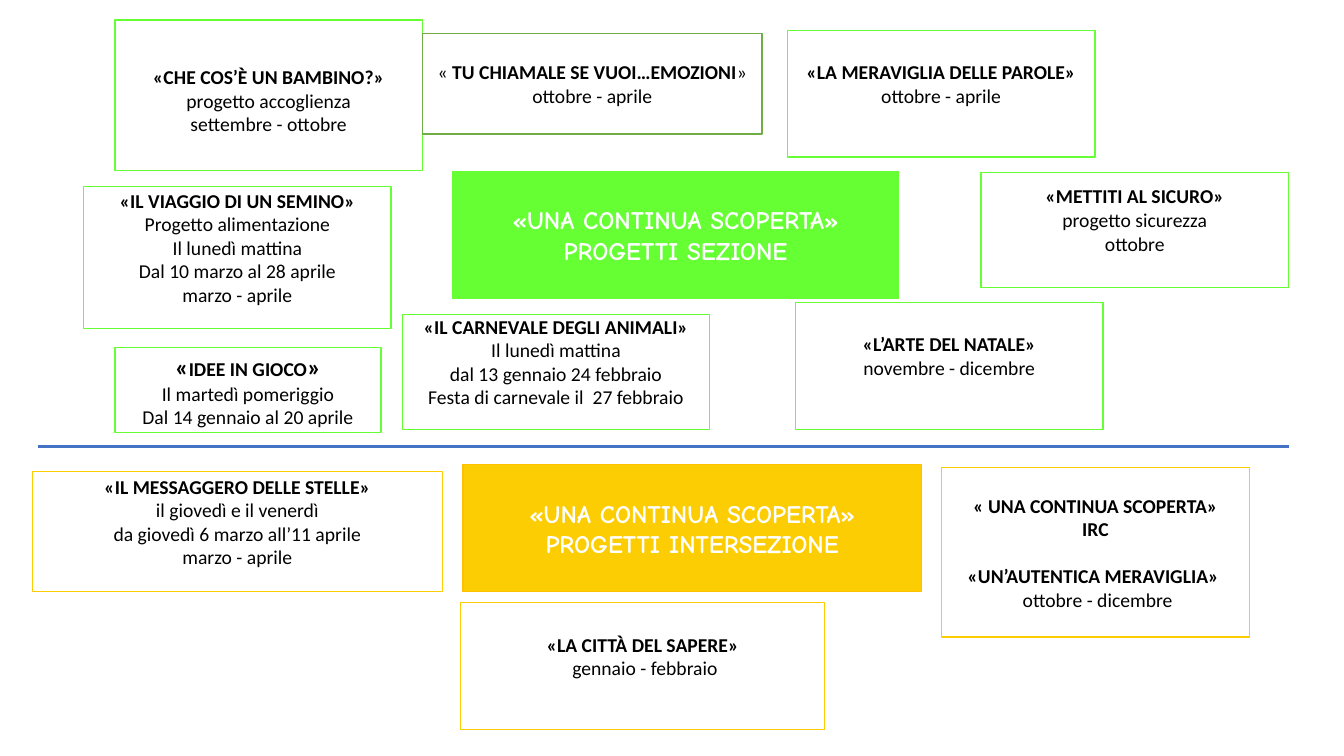
from pptx import Presentation
from pptx.dml.color import RGBColor
from pptx.enum.shapes import MSO_CONNECTOR as Link, MSO_SHAPE as Form
from pptx.enum.text import MSO_ANCHOR as Anchor, PP_ALIGN as Align
from pptx.oxml.ns import qn
from pptx.util import Inches, Pt
from lxml.etree import SubElement

GREEN, GOLD, WHITE = "66FF33", "FDCD03", "FFFFFF"
WIDE = 3.05  # usual width of a project card
LOW = 0.25   # bottom inset that lifts the text of a card


def color(code):
    return RGBColor.from_string(code)


def write(shape, lines, size=14, font="Calibri", ink="000000", heads=1,
          gap=None, top=0.05, low=0.05):
    """Fill a shape; the first `heads` lines are bold, and line `gap` has space above.

    A line is a string or a list of (text, size, bold) runs.
    """
    frame = shape.text_frame
    frame.word_wrap = True
    frame.vertical_anchor = Anchor.MIDDLE
    frame.margin_left = frame.margin_right = Inches(0.1)
    frame.margin_top, frame.margin_bottom = Inches(top), Inches(low)
    for i, line in enumerate(lines):
        para = frame.paragraphs[0] if i == 0 else frame.add_paragraph()
        para.alignment = Align.CENTER
        if i == gap:
            para.space_before = Pt(17)
        runs = [(line, size, i < heads)] if isinstance(line, str) else line
        for words, points, bold in runs:
            run = para.add_run()
            run.text = words
            run.font.name, run.font.size, run.font.bold = font, Pt(points), bold
            run.font.color.rgb = color(ink)


def card(slide, box, lines, line=GREEN, fill=WHITE, **form):
    shape = slide.shapes.add_shape(Form.RECTANGLE, *map(Inches, box))
    shape.shadow.inherit = False
    shape.fill.solid()
    shape.fill.fore_color.rgb = color(fill)
    shape.line.color.rgb = color(line)
    shape.line.width = Pt(1)
    write(shape, lines, **form)


def banner(slide, box, name, fill, line):
    card(slide, box, ["«UNA CONTINUA SCOPERTA»", name], line, fill,
         size=18, font="Comic Neue", ink=WHITE, heads=2)


def rule(slide, left, right, y):
    link = slide.shapes.add_connector(
        Link.STRAIGHT, Inches(left), Inches(y), Inches(right), Inches(y))
    link.line.color.rgb = color("4472C4")
    link.line.width = Pt(1.5)
    SubElement(link._element.spPr, qn("a:effectLst"))


def section(slide):
    """Projects of the single class, above the rule."""
    banner(slide, (4.49, 1.7, 4.42, 1.26), "PROGETTI SEZIONE", GREEN, GREEN)
    card(slide, (1.14, 0.2, WIDE, 1.49),
         ["«CHE COS’È UN BAMBINO?»", "progetto accoglienza",
          "settembre - ottobre"], top=0.35, low=LOW)
    cards = [
        (0.83, 1.85, 1.41, ["«IL VIAGGIO DI UN SEMINO»", "Progetto alimentazione",
                            "Il lunedì mattina", "Dal 10 marzo al 28 aprile",
                            "marzo - aprile"]),
        (9.73, 1.71, 1.14, ["«METTITI AL SICURO»", "progetto sicurezza", "ottobre"]),
        (3.99, 3.12, 1.14, ["«IL CARNEVALE DEGLI ANIMALI»", "Il lunedì mattina",
                            "dal 13 gennaio 24 febbraio",
                            "Festa di carnevale il  27 febbraio"]),
        (7.81, 0.3, 1.26, ["«LA MERAVIGLIA DELLE PAROLE»", "ottobre - aprile"]),
        (7.89, 3, 1.26, ["«L’ARTE DEL NATALE»", "novembre - dicembre"]),
    ]
    for x, y, high, lines in cards:
        card(slide, (x, y, WIDE, high), lines, low=LOW)
    card(slide, (4.19, 0.33, 3.37, 1),
         [[("« ", 14, False), ("TU CHIAMALE SE VUOI…EMOZIONI", 14, True),
           ("»", 14, False)], "ottobre - aprile"], "70AD47")
    card(slide, (1.14, 3.45, 2.64, 0.84),
         [[("«", 18, True), ("IDEE IN GIOCO", 14, True), ("»", 18, True)],
          "Il martedì pomeriggio", "Dal 14 gennaio al 20 aprile"])


def shared(slide):
    """Projects across classes, below the rule."""
    banner(slide, (4.59, 4.61, 4.55, 1.26), "PROGETTI INTERSEZIONE", GOLD, "FFC000")
    card(slide, (4.57, 5.98, 3.61, 1.26),
         ["«LA CITTÀ DEL SAPERE»", " gennaio - febbraio"], GOLD, low=LOW)
    card(slide, (0.32, 4.68, 4.07, 1.19),
         ["«IL MESSAGGERO DELLE STELLE»", "il giovedì e il venerdì",
          "da giovedì 6 marzo all’11 aprile", "marzo - aprile"], GOLD, low=LOW)
    card(slide, (9.34, 4.64, WIDE, 1.68),
         ["« UNA CONTINUA SCOPERTA»", "IRC", "«UN’AUTENTICA MERAVIGLIA» ",
          " ottobre - dicembre"], GOLD, heads=3, gap=2)


def main():
    deck = Presentation()
    deck.slide_width, deck.slide_height = Inches(13.33), Inches(7.5)
    slide = deck.slides.add_slide(deck.slide_layouts[6])
    section(slide)
    rule(slide, 0.38, 12.78, 4.43)
    shared(slide)
    deck.save("out.pptx")


if __name__ == "__main__":
    main()
